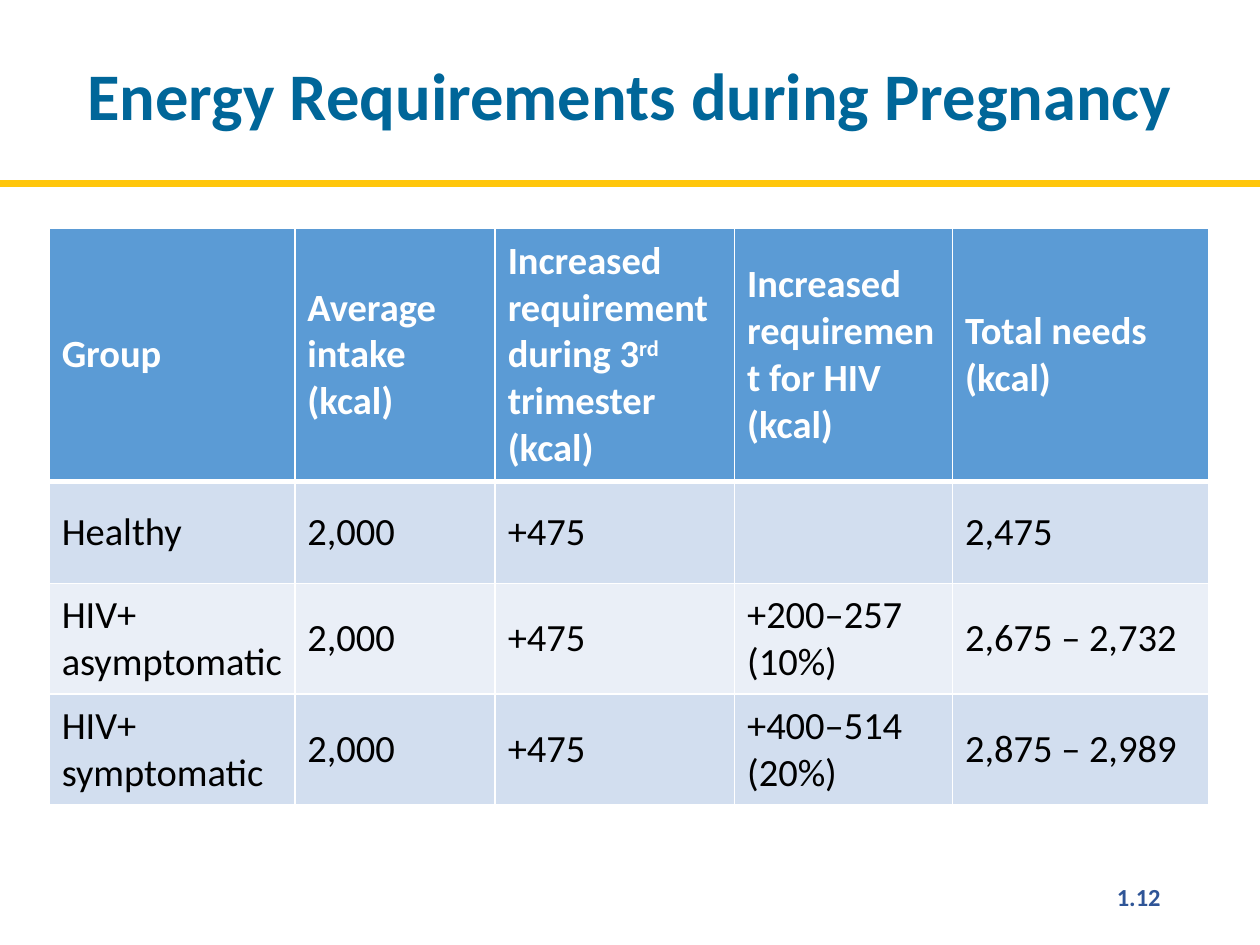
from lxml import etree
from pptx import Presentation
from pptx.dml.color import RGBColor
from pptx.enum.shapes import MSO_CONNECTOR as Connector
from pptx.enum.text import MSO_ANCHOR as Anchor, PP_ALIGN as Align
from pptx.oxml import parse_xml
from pptx.oxml.ns import nsdecls, qn
from pptx.util import Inches, Pt

FONT = "Calibri"
COLUMN_WIDTHS = [1.95, 1.59, 1.9, 1.73, 2.03]
ROW_HEIGHTS = [2.01, 0.81, 0.88, 0.88]
BAND_FILLS = ["D2DEEF", "EAEFF7"]
ROWS = [
    ["Group", "Average intake (kcal)",
     "Increased requirement during 3^rd^ trimester (kcal)",
     "Increased requirement for HIV (kcal)", "Total needs (kcal)"],
    ["Healthy", "2,000", "+475", "", "2,475"],
    ["HIV+ asymptomatic", "2,000", "+475", "+200–257 (10%)", "2,675 – 2,732"],
    ["HIV+ symptomatic", "2,000", "+475", "+400–514 (20%)", "2,875 – 2,989"],
]


def rgb(value):
    return RGBColor.from_string(value)


def style(p, size, color, bold=False, align=None):
    p.font.name = FONT
    p.font.size = Pt(size)
    p.font.bold = bold
    p.font.color.rgb = rgb(color)
    p.alignment = align


def add_title(slide, left, top, width, height):
    title = slide.shapes.title
    title.left, title.top = Inches(left), Inches(top)
    title.width, title.height = Inches(width), Inches(height)
    tf = title.text_frame
    tf.word_wrap = True
    tf.vertical_anchor = Anchor.MIDDLE
    tf.margin_left = tf.margin_right = tf.margin_top = Inches(0.2)
    tf.margin_bottom = Inches(0.05)
    p = tf.paragraphs[0]
    p.text = "Energy Requirements during Pregnancy"
    p.line_spacing = 0.9
    style(p, 38, "006699", True, Align.CENTER)


def add_rule(slide, left, top, width):
    rule = slide.shapes.add_connector(
        Connector.STRAIGHT, Inches(left), Inches(top), Inches(left + width), Inches(top))
    rule.line.color.rgb = rgb("FFC60B")
    rule.line.width = Pt(4)
    etree.SubElement(rule._element.spPr, qn("a:effectLst"))


def set_borders(cell, color, **widths):
    tc_pr = cell._tc.get_or_add_tcPr()
    for side in "LRTB":
        tc_pr.append(parse_xml(
            f'<a:ln{side} {nsdecls("a")} w="{Pt(widths.get(side, 1))}">'
            f'<a:solidFill><a:srgbClr val="{color}"/></a:solidFill></a:ln{side}>'))


def fill_cell(cell, text, size, color, bold):
    cell.vertical_anchor = Anchor.MIDDLE
    p = cell.text_frame.paragraphs[0]
    style(p, size, color, bold)
    for i, part in enumerate(text.split("^")):
        if part:
            r = p.add_run()
            r.text = part
            if i % 2:
                r._r.get_or_add_rPr().set("baseline", "30000")


def add_energy_table(slide, left, top, width, height):
    table = slide.shapes.add_table(
        len(ROWS), len(COLUMN_WIDTHS), Inches(left), Inches(top),
        Inches(width), Inches(height)).table
    for column, column_width in zip(table.columns, COLUMN_WIDTHS):
        column.width = Inches(column_width)
    for i, (texts, row_height) in enumerate(zip(ROWS, ROW_HEIGHTS)):
        header = i == 0
        table.rows[i].height = Inches(row_height)
        for j, text in enumerate(texts):
            cell = table.cell(i, j)
            set_borders(cell, "FFFFFF", B=3 if header else 1, T=3 if i == 1 else 1)
            cell.fill.solid()
            cell.fill.fore_color.rgb = rgb("5B9BD5" if header else BAND_FILLS[(i - 1) % 2])
            fill_cell(cell, text, 22, "FFFFFF" if header else "000000", header)


def add_page_number(slide, left, top, width, height):
    box = slide.shapes.add_textbox(Inches(left), Inches(top), Inches(width), Inches(height))
    tf = box.text_frame
    tf.word_wrap = True
    p = tf.paragraphs[0]
    p.text = "1.12"
    style(p, 14, "2F5597", True, Align.RIGHT)


def main():
    prs = Presentation()
    prs.slide_width, prs.slide_height = Inches(10), Inches(7.5)
    slide = prs.slides.add_slide(prs.slide_layouts[5])
    add_rule(slide, 0, 1.46, 10)
    add_title(slide, 0, 0, 10, 1.42)
    add_energy_table(slide, 0.39, 1.81, sum(COLUMN_WIDTHS), sum(ROW_HEIGHTS))
    add_page_number(slide, 7.06, 6.95, 2.25, 0.4)
    prs.save("out.pptx")


if __name__ == "__main__":
    main()
